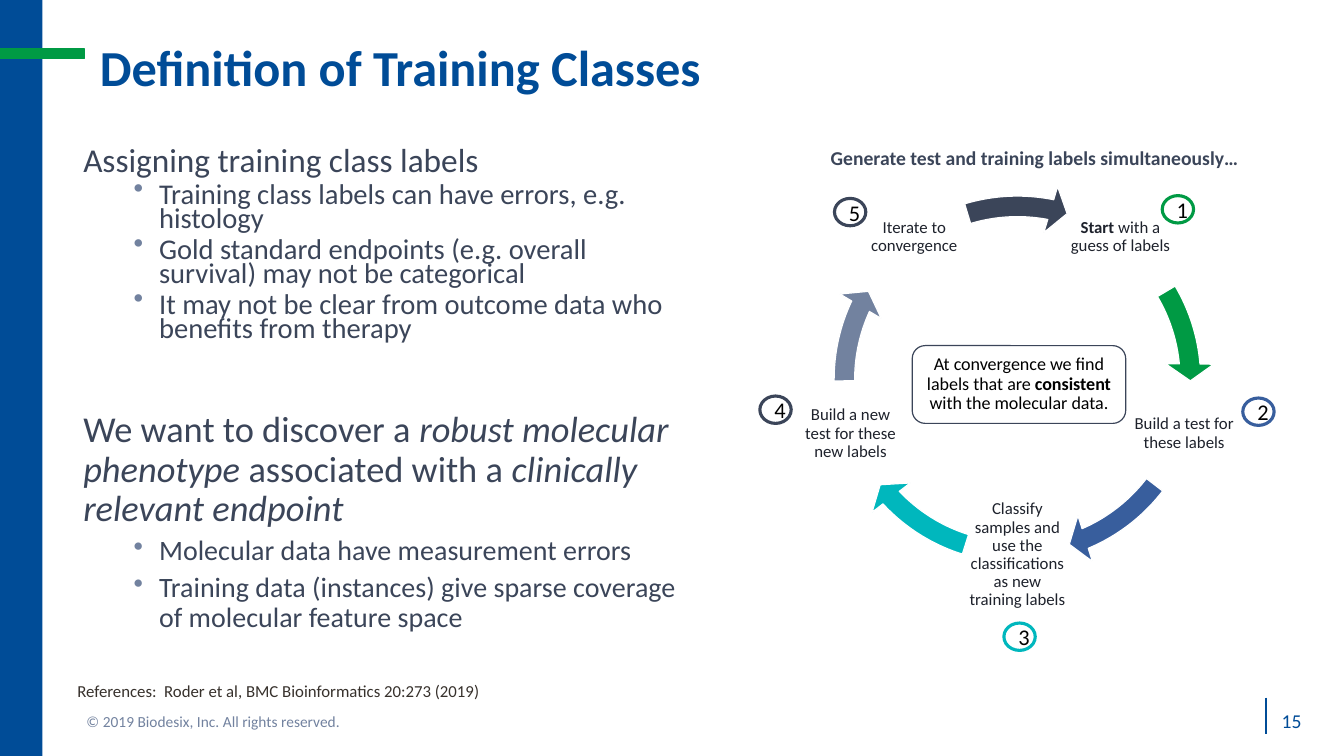
from dataclasses import dataclass
from math import cos, radians, sin

from lxml.etree import SubElement
from pptx import Presentation
from pptx.dml.color import RGBColor
from pptx.enum.shapes import MSO_CONNECTOR, MSO_SHAPE as Shape
from pptx.enum.text import MSO_ANCHOR as Anchor, PP_ALIGN as Align
from pptx.oxml.ns import qn
from pptx.util import Cm, Pt

COLORS = {
    "blue": "004C97", "green": "009A44", "indigo": "385E9D", "teal": "00B7BD",
    "slate": "72829F", "navy": "3B4559", "ink": "1E222C", "brown": "37312C",
    "black": "000000", "white": "FFFFFF",
}
FONT = "Calibri"
CENTER_X, CENTER_Y, RADIUS = 25.64, 9.56, 4.42
RING, LABEL = 9.93, 2.64


@dataclass
class Run:
    text: str
    bold: bool = False
    italic: bool = False


@dataclass
class Para:
    runs: list[Run]
    size: float
    color: str = "navy"
    align: Align = Align.LEFT
    spacing: float = 1.0
    before: float = 0
    bullet: bool = False


@dataclass
class Step:
    label: list[Run]
    arrow: str
    badge: str
    start: float
    end: float
    left: float
    top: float


STEPS = [
    Step([Run("Start", bold=True), Run(" with a guess of labels")],
         "green", "green", 329.42, 354.91, 29.29, 4.93),
    Step([Run("Build a test for these labels")],
         "indigo", "indigo", 37.54, 66.93, 31.32, 10.03),
    Step([Run("Classify samples and use the classifications as new training labels")],
         "teal", "teal", 107.47, 136.87, 25.3, 15.7),
    Step([Run("Build a new test for these new labels")],
         "slate", "navy", 179.5, 204.99, 19.15, 9.98),
    Step([Run("Iterate to convergence")],
         "navy", "navy", 253.29, 281.12, 21.03, 5),
]


def rgb(name: str) -> RGBColor:
    return RGBColor.from_string(COLORS[name])


def add_bullet(p) -> None:
    pPr = p._p.get_or_add_pPr()
    pPr.set("marL", str(Cm(1.91)))
    pPr.set("indent", str(-Cm(0.64)))
    clr = SubElement(pPr, qn("a:buClr"))
    SubElement(clr, qn("a:srgbClr"), val=COLORS["slate"])
    SubElement(pPr, qn("a:buChar"), char="•")


def fill_text(tf, paras: list[Para]) -> None:
    tf.word_wrap = True
    for i, para in enumerate(paras):
        p = tf.paragraphs[0] if i == 0 else tf.add_paragraph()
        if para.bullet:
            p.level = 1
            add_bullet(p)
        p.alignment = para.align
        p.line_spacing = para.spacing
        p.space_before = Pt(para.before)
        for run in para.runs:
            r = p.add_run()
            r.text = run.text
            r.font.name = FONT
            r.font.size = Pt(para.size)
            r.font.bold = run.bold
            r.font.italic = run.italic
            r.font.color.rgb = rgb(para.color)


def set_margins(tf, x: float, y: float) -> None:
    tf.margin_left = tf.margin_right = Cm(x)
    tf.margin_top = tf.margin_bottom = Cm(y)


def add_text(s, left: float, top: float, width: float, height: float, paras: list[Para]):
    box = s.shapes.add_textbox(Cm(left), Cm(top), Cm(width), Cm(height))
    fill_text(box.text_frame, paras)
    return box.text_frame


def add_shape(s, kind: Shape, left: float, top: float, width: float, height: float,
              fill: str, line: str = "", weight: float = 0.85):
    sp = s.shapes.add_shape(kind, Cm(left), Cm(top), Cm(width), Cm(height))
    sp.shadow.inherit = False
    sp.fill.solid()
    sp.fill.fore_color.rgb = rgb(fill)
    if line:
        sp.line.color.rgb = rgb(line)
        sp.line.width = Pt(weight)
    else:
        sp.line.fill.background()
    return sp


def add_frame(s) -> None:
    add_shape(s, Shape.RECTANGLE, 0, 0, 1.07, 19.05, "blue")
    add_shape(s, Shape.RECTANGLE, 0, 1.24, 2.13, 0.23, "green", "green", 1)
    rule = s.shapes.add_connector(MSO_CONNECTOR.STRAIGHT, Cm(31.9), Cm(17.58), Cm(31.9), Cm(18.49))
    rule.line.color.rgb = rgb("blue")
    rule.line.width = Pt(1)
    SubElement(rule._element.spPr, qn("a:effectLst"))
    add_text(s, 32.05, 17.73, 1.57, 0.86, [Para([Run("15")], 14, "blue")])
    add_text(s, 1.93, 17.81, 16.94, 0.74,
             [Para([Run("© 2019 Biodesix, Inc. All rights reserved.")], 11, "slate")])


def add_title(s) -> None:
    title = s.shapes.title
    title.left, title.top, title.width, title.height = Cm(2.26), Cm(0.99), Cm(30.48), Cm(1.55)
    title.text_frame.vertical_anchor = Anchor.MIDDLE
    fill_text(title.text_frame,
              [Para([Run("Definition of Training Classes", bold=True)], 36, "blue", spacing=0.9)])


def add_step(s, number: int, step: Step) -> None:
    angle = radians(72 * number - 126)
    x, y = CENTER_X + RADIUS * cos(angle), CENTER_Y + RADIUS * sin(angle)
    tf = add_text(s, x - LABEL / 2, y - LABEL / 2, LABEL, LABEL,
                  [Para(step.label, 12, "ink", Align.CENTER, 0.9)])
    tf.vertical_anchor = Anchor.MIDDLE
    set_margins(tf, 0.05, 0.05)

    arrow = add_shape(s, Shape.CIRCULAR_ARROW, CENTER_X - RING / 2, CENTER_Y - RING / 2,
                      RING, RING, step.arrow, "white")
    for i, value in enumerate([0.052, 5.59 * 0.6, step.end * 0.6, step.start * 0.6, 0.061]):
        arrow.adjustments[i] = value

    badge = add_shape(s, Shape.OVAL, step.left, step.top, 0.79, 0.69, "white", step.badge, 2.25)
    fill_text(badge.text_frame, [Para([Run(str(number))], 16, "black", Align.CENTER)])


def add_cycle(s) -> None:
    for number, step in enumerate(STEPS, 1):
        add_step(s, number, step)
    hub = add_shape(s, Shape.ROUNDED_RECTANGLE, 22.99, 8.71, 5.38, 1.96, "white", "navy")
    set_margins(hub.text_frame, 0.18, 0.1)
    runs = [Run("At convergence we find labels that are "), Run("consistent", bold=True),
            Run(" with the molecular data.")]
    fill_text(hub.text_frame, [Para(runs, 12.9, "black", Align.CENTER, 0.9)])
    heading = Run("Generate test and training labels simultaneously…", bold=True)
    add_text(s, 19.46, 3.56, 13.23, 0.86, [Para([heading], 14, align=Align.CENTER)])


def add_section(s, top: float, height: float, heading: list[Run], size: float,
                bullets: list[str], bullet_size: float, spacing: float) -> None:
    paras = [Para(heading, size, spacing=spacing)]
    paras += [Para([Run(b)], bullet_size, spacing=spacing, before=5, bullet=True) for b in bullets]
    add_text(s, 1.85, top, 15.65, height, paras)


def main() -> None:
    prs = Presentation()
    prs.slide_width, prs.slide_height = Cm(33.87), Cm(19.05)
    s = prs.slides.add_slide(prs.slide_layouts[5])
    add_frame(s)
    add_title(s)
    add_cycle(s)
    add_section(s, 3.66, 5.46, [Run("Assigning training class labels")], 23.8, [
        "Training class labels can have errors, e.g. histology",
        "Gold standard endpoints (e.g. overall survival) may not be categorical",
        "It may not be clear from outcome data who benefits from therapy",
    ], 20.4, 0.7)
    add_section(s, 10.24, 6.65, [
        Run("We want to discover a "), Run("robust molecular phenotype", italic=True),
        Run(" associated with a "), Run("clinically relevant endpoint", italic=True),
    ], 26, [
        "Molecular data have measurement errors",
        "Training data (instances) give sparse coverage of molecular feature space",
    ], 20, 0.9)
    add_text(s, 1.7, 17.02, 26.09, 0.76,
             [Para([Run("References:  Roder et al, BMC Bioinformatics 20:273 (2019)")], 12, "brown")])
    prs.save("out.pptx")


if __name__ == "__main__":
    main()
